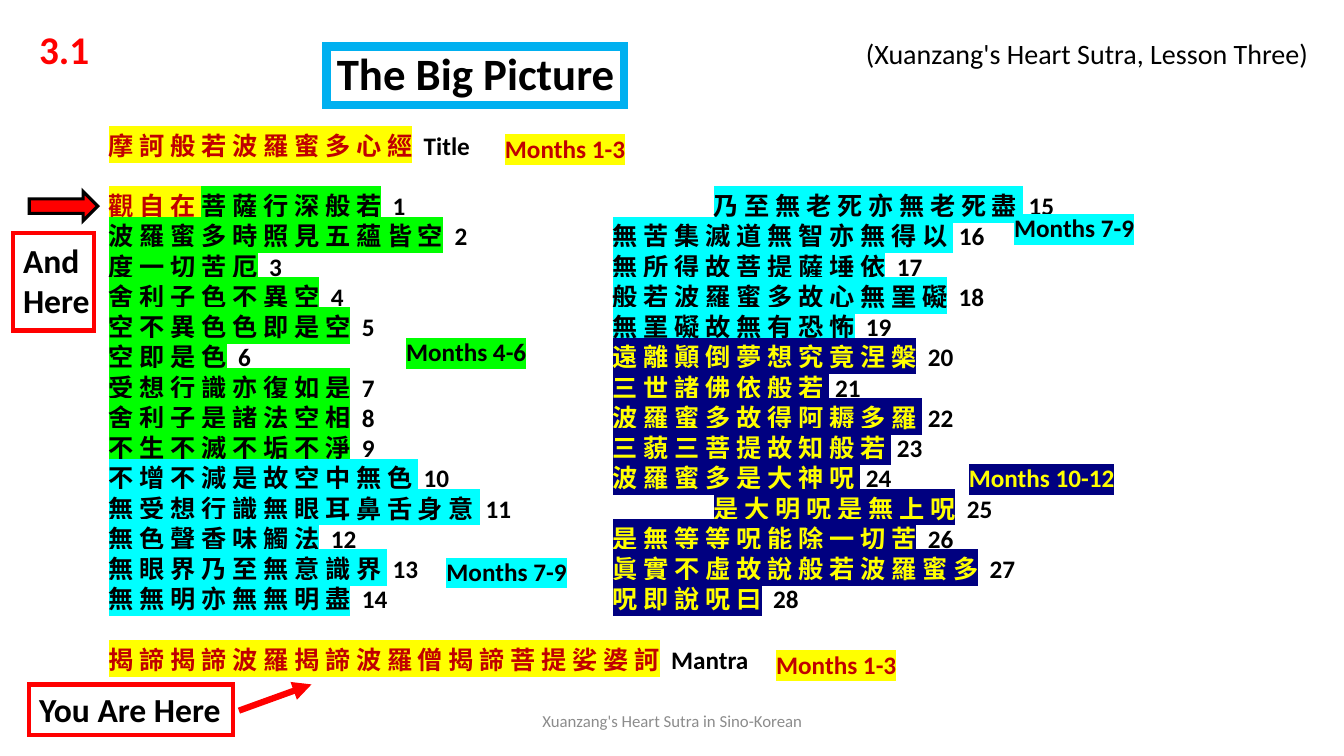
from lxml import etree
from pptx import Presentation
from pptx.dml.color import RGBColor
from pptx.enum.shapes import MSO_CONNECTOR, MSO_SHAPE
from pptx.enum.text import MSO_ANCHOR, MSO_AUTO_SIZE, PP_ALIGN
from pptx.oxml.ns import qn
from pptx.util import Inches, Pt

RECTANGLE, RIGHT_ARROW = MSO_SHAPE.RECTANGLE, MSO_SHAPE.RIGHT_ARROW
STRAIGHT = MSO_CONNECTOR.STRAIGHT
TOP, MIDDLE = MSO_ANCHOR.TOP, MSO_ANCHOR.MIDDLE
LEFT, CENTER = PP_ALIGN.LEFT, PP_ALIGN.CENTER
NO_AUTOFIT = MSO_AUTO_SIZE.NONE

BLACK, RED, DARK_RED, BLUE, GREY = "000000", "FF0000", "C00000", "00B0F0", "8C8C8C"
YELLOW, GREEN, CYAN, NAVY = "FFFF00", "00FF00", "00FFFF", "000080"
INK = {YELLOW: DARK_RED, GREEN: BLACK, CYAN: BLACK, NAVY: YELLOW}


def add_run(paragraph, text, size=18, color=BLACK, bold=True, highlight=None):
    run = paragraph.add_run()
    run.text = text
    formats = {"name": "Calibri", "size": Pt(size), "bold": bold}
    for name, value in formats.items():
        setattr(run.font, name, value)
    run.font.color.rgb = RGBColor.from_string(INK.get(highlight, color))
    if highlight:
        marker = etree.Element(qn("a:highlight"))
        etree.SubElement(marker, qn("a:srgbClr"), val=highlight)
        run._r.get_or_add_rPr().find(qn("a:solidFill")).addnext(marker)


def add_tab_stop(paragraph, inches):
    tab_stops = etree.SubElement(paragraph._p.get_or_add_pPr(), qn("a:tabLst"))
    etree.SubElement(tab_stops, qn("a:tab"), pos=str(Inches(inches)), algn="l")


presentation = Presentation()
presentation.slide_width, presentation.slide_height = Inches(13.33), Inches(7.5)
slide = presentation.slides.add_slide(presentation.slide_layouts[5])

# Title
title = slide.shapes.title
title.left, title.top, title.width, title.height = map(Inches, (3.24, 0.4, 3.34, 0.64))
title_format = {"word_wrap": True, "auto_size": NO_AUTOFIT, "vertical_anchor": TOP}
for name, value in title_format.items():
    setattr(title.text_frame, name, value)
title.text_frame.paragraphs[0].alignment = LEFT
add_run(title.text_frame.paragraphs[0], "The Big Picture", 32)

# Sutra lines: 1 to 14 on the left, 15 to 28 on the right
left_lines = [
    "菩 薩 行 深 般 若", "波 羅 蜜 多 時 照 見 五 蘊 皆 空", "度 一 切 苦 厄",
    "舍 利 子 色 不 異 空", "空 不 異 色 色 即 是 空", "空 即 是 色",
    "受 想 行 識 亦 復 如 是", "舍 利 子 是 諸 法 空 相", "不 生 不 滅 不 垢 不 淨",
    "不 增 不 減 是 故 空 中 無 色 ", "無 受 想 行 識 無 眼 耳 鼻 舌 身 意 ",
    "無 色 聲 香 味 觸 法", "無 眼 界 乃 至 無 意 識 界 ", "無 無 明 亦 無 無 明 盡",
]
right_lines = [
    "乃 至 無 老 死 亦 無 老 死 盡 ", "無 苦 集 滅 道 無 智 亦 無 得 以 ",
    "無 所 得 故 菩 提 薩 埵 依", "般 若 波 羅 蜜 多 故 心 無 罣 礙",
    "無 罣 礙 故 無 有 恐 怖", "遠 離 顚 倒 夢 想 究 竟 涅 槃", "三 世 諸 佛 依 般 若 ",
    "波 羅 蜜 多 故 得 阿 耨 多 羅 ", "三 藐 三 菩 提 故 知 般 若 ",
    "波 羅 蜜 多 是 大 神 呪 ", "是 大 明 呪 是 無 上 呪", "是 無 等 等 呪 能 除 一 切 苦",
    "眞 實 不 虛 故 說 般 若 波 羅 蜜 多", "呪 即 說 呪 曰",
]
indented_lines = (15, 25)
line_pitch = Pt(21.6)

rows = [[("摩 訶 般 若 波 羅 蜜 多 心 經", "Title", YELLOW)]]
for number, (left_text, right_text) in enumerate(zip(left_lines, right_lines), 1):
    rows.append([
        (left_text, number, GREEN if number < 10 else CYAN),
        (right_text, number + 14, CYAN if number + 14 < 20 else NAVY),
    ])
rows.append([("揭 諦 揭 諦 波 羅 揭 諦 波 羅 僧 揭 諦 菩 提 娑 婆 訶", "Mantra", YELLOW)])

sutra = slide.shapes.add_textbox(*map(Inches, (0.98, 1.24, 9.74, 5.55))).text_frame
sutra.word_wrap = True
for index, row in enumerate(rows):
    paragraph = sutra.paragraphs[0] if index == 0 else sutra.add_paragraph()
    starts_block = index in (1, len(rows) - 1)
    paragraph_format = {
        "line_spacing": line_pitch,
        "space_before": line_pitch if starts_block else Pt(0),
    }
    for name, value in paragraph_format.items():
        setattr(paragraph, name, value)
    if index == 1:
        add_run(paragraph, "觀 自 在 ", highlight=YELLOW)
    for column, (text, label, highlight) in enumerate(row):
        if column == 1:
            add_tab_stop(paragraph, 6 if label in indented_lines else 5)
            add_run(paragraph, "\t")
        add_run(paragraph, text, highlight=highlight)
        add_run(paragraph, f" {label}" if text.endswith(" ") else f"  {label}")

# Text boxes: place, lines of text, size, colour, bold, highlight
text_boxes = [
    ((4.91, 1.27, 1.42, 0.4), ["Months 1-3"], 18, BLACK, True, YELLOW),
    ((7.6, 6.39, 2.46, 0.4), ["Months 1-3"], 18, BLACK, True, YELLOW),
    ((4.33, 5.47, 1.44, 0.4), ["Months 7-9"], 18, BLACK, True, CYAN),
    ((9.96, 2.06, 1.51, 0.4), ["Months 7-9"], 18, BLACK, True, CYAN),
    ((3.93, 3.29, 1.51, 0.4), ["Months 4-6"], 18, BLACK, True, GREEN),
    ((9.51, 4.54, 1.69, 0.71), ["Months 10-12"], 18, BLACK, True, NAVY),
    ((0.29, 0.17, 12.91, 0.58), ["3.1"], 28, RED, True, None),
    ((4.42, 6.95, 4.5, 0.4), ["Xuanzang's Heart Sutra in Sino-Korean"], 12, GREY, False, None),
    ((0.29, 6.79, 2.24, 0.5), ["You Are Here"], 24, BLACK, True, None),
    ((0.13, 2.33, 0.91, 0.91), ["And", "Here"], 24, BLACK, True, None),
]
frames = {}
for place, lines, *run_format in text_boxes:
    text_frame = slide.shapes.add_textbox(*map(Inches, place)).text_frame
    text_frame.word_wrap = True
    for index, line in enumerate(lines):
        paragraph = text_frame.paragraphs[0] if index == 0 else text_frame.add_paragraph()
        add_run(paragraph, line, *run_format)
    frames[lines[0]] = text_frame

# Lesson name on the header line
header = frames["3.1"].paragraphs[0]
header.line_spacing, header.space_after = 1.07, Pt(8)
add_tab_stop(header, 8.2)
add_run(header, "\t(Xuanzang's Heart Sutra, Lesson Three)", 20, bold=False)

# Footer alignment
footer = frames["Xuanzang's Heart Sutra in Sino-Korean"]
footer.vertical_anchor = MIDDLE
footer.paragraphs[0].alignment = CENTER

# Frames and block arrow: preset, place, fill, line colour, line width
outlines = [
    (RECTANGLE, (0.29, 6.79, 2.02, 0.5), None, RED, 3),
    (RECTANGLE, (0.13, 2.31, 0.8, 0.97), None, RED, 3),
    (RIGHT_ARROW, (0.29, 1.9, 0.68, 0.29), RED, BLACK, 2.25),
    (RECTANGLE, (3.24, 0.46, 2.95, 0.58), None, BLUE, 6),
]
for preset, place, fill, line_color, line_width in outlines:
    shape = slide.shapes.add_shape(preset, *map(Inches, place))
    shape.shadow.inherit = False
    if fill:
        shape.fill.solid()
        shape.fill.fore_color.rgb = RGBColor.from_string(fill)
    else:
        shape.fill.background()
    shape.line.color.rgb = RGBColor.from_string(line_color)
    shape.line.width = Pt(line_width)
    etree.SubElement(shape.line._get_or_add_ln(), qn("a:miter"), lim="800000")

# Arrow to the mantra
pointer = slide.shapes.add_connector(STRAIGHT, *map(Inches, (2.37, 7.05, 3.09, 6.79)))
pointer.line.color.rgb = RGBColor.from_string(RED)
pointer.line.width = Pt(4.5)
etree.SubElement(pointer.line._get_or_add_ln(), qn("a:tailEnd"), type="triangle")
etree.SubElement(pointer._element.spPr, qn("a:effectLst"))

presentation.save("out.pptx")
